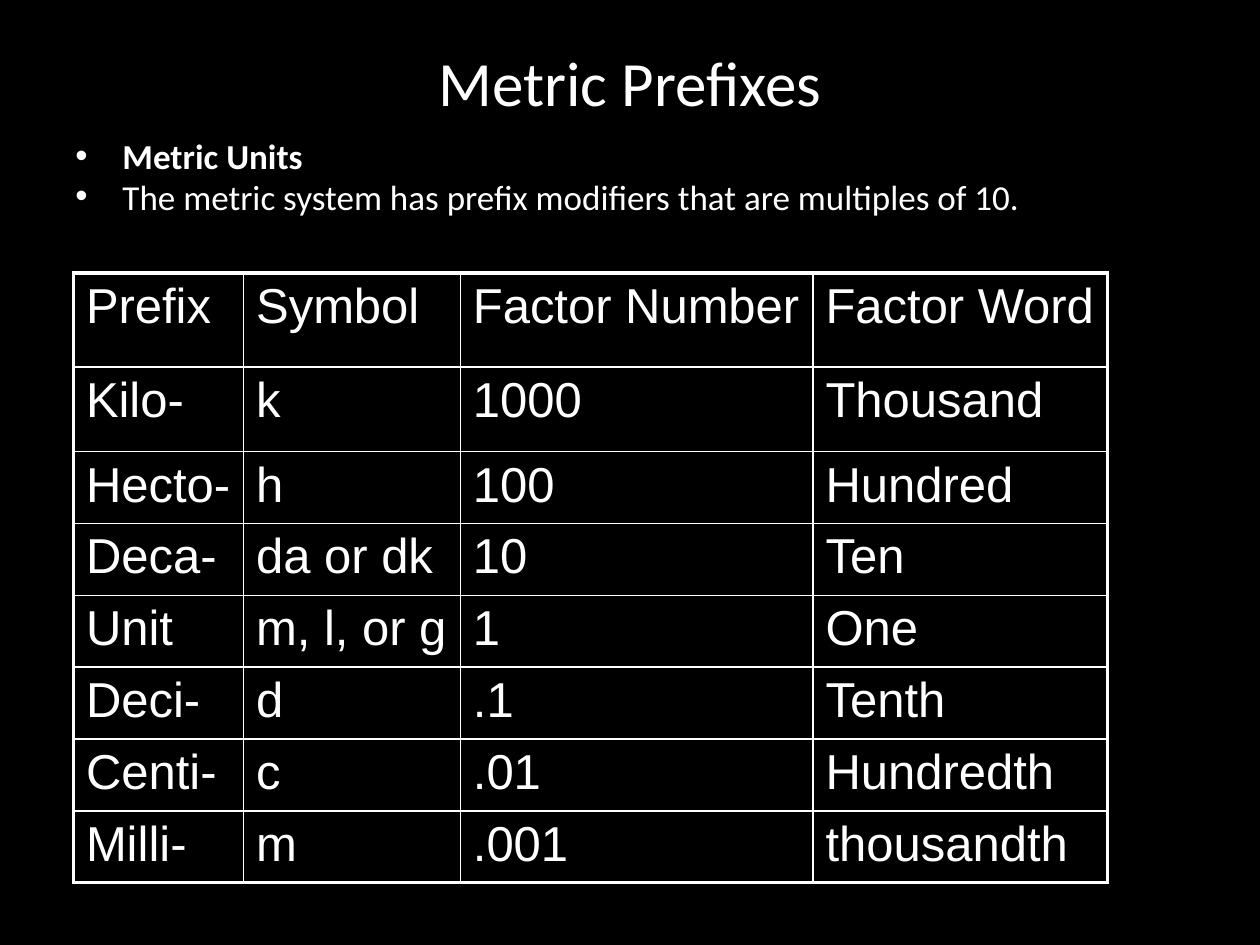
from dataclasses import dataclass

from lxml.etree import SubElement
from pptx import Presentation
from pptx.dml.color import RGBColor
from pptx.enum.text import PP_ALIGN
from pptx.oxml.ns import qn
from pptx.util import Cm, Pt


@dataclass(frozen=True)
class Theme:
    background: str = "000000"
    ink: str = "FFFFFF"
    text_font: str = "Calibri"
    table_font: str = "Arial"
    title_size: int = 36
    body_size: int = 20
    table_size: int = 28
    outer_line: float = 2.25
    inner_line: float = 1


BULLETS = [
    ("Metric Units", True),
    ("The metric system has prefix modifiers that are multiples of 10.", False),
]
PREFIXES = [
    ("Prefix", "Symbol", "Factor Number", "Factor Word"),
    ("Kilo-", "k", "1000", "Thousand"),
    ("Hecto-", "h", "100", "Hundred"),
    ("Deca-", "da or dk", "10", "Ten"),
    ("Unit", "m, l, or g", "1", "One"),
    ("Deci-", "d", ".1", "Tenth"),
    ("Centi-", "c", ".01", "Hundredth"),
    ("Milli-", "m", ".001", "thousandth"),
]
COLUMN_WIDTHS = [3.43, 4.37, 7.11, 5.94]
ROW_HEIGHTS = [1.9, 1.7] + [1.45] * 5 + [1.4]


class SlideBuilder:
    def __init__(self, page, theme):
        self.page = page
        self.theme = theme
        fill = page.background.fill
        fill.solid()
        fill.fore_color.rgb = RGBColor.from_string(theme.background)

    def style(self, paragraph, font_name, size, bold=False):
        font = paragraph.font
        font.name = font_name
        font.size = Pt(size)
        font.bold = bold
        font.color.rgb = RGBColor.from_string(self.theme.ink)

    def text_frame(self, left, top, width, height):
        box = self.page.shapes.add_textbox(Cm(left), Cm(top), Cm(width), Cm(height))
        box.text_frame.word_wrap = True
        return box.text_frame

    def title(self, text, *bounds):
        paragraph = self.text_frame(*bounds).paragraphs[0]
        paragraph.text = text
        paragraph.alignment = PP_ALIGN.CENTER
        self.style(paragraph, self.theme.text_font, self.theme.title_size)

    def bullets(self, items, *bounds):
        frame = self.text_frame(*bounds)
        for index, (text, bold) in enumerate(items):
            paragraph = frame.add_paragraph() if index else frame.paragraphs[0]
            paragraph.text = text
            paragraph.line_spacing = 0.8
            paragraph.space_after = Pt(0.2 * self.theme.body_size)
            self.style(paragraph, self.theme.text_font, self.theme.body_size, bold)
            self.add_bullet(paragraph, Cm(0.95))

    def add_bullet(self, paragraph, indent):
        properties = paragraph._p.get_or_add_pPr()
        properties.set("marL", str(indent))
        properties.set("indent", str(-indent))
        font = properties.makeelement(qn("a:buFont"), {"typeface": "Arial"})
        mark = properties.makeelement(qn("a:buChar"), {"char": "•"})
        defaults = properties.find(qn("a:defRPr"))
        defaults.addprevious(font)
        defaults.addprevious(mark)

    def table(self, rows, widths, heights, left, top):
        table = self.page.shapes.add_table(
            len(rows), len(widths), Cm(left), Cm(top), Cm(sum(widths)), Cm(sum(heights))
        ).table
        table.first_row = table.horz_banding = False
        for column, width in zip(table.columns, widths):
            column.width = Cm(width)
        last_row, last_column = len(rows) - 1, len(widths) - 1
        for r, (row, height) in enumerate(zip(rows, heights)):
            table.rows[r].height = Cm(height)
            for c, text in enumerate(row):
                cell = table.cell(r, c)
                cell.text = text
                paragraph = cell.text_frame.paragraphs[0]
                self.style(paragraph, self.theme.table_font, self.theme.table_size)
                outer_sides = {
                    "L": c == 0, "R": c == last_column, "T": r == 0, "B": r == last_row,
                }
                self.add_borders(cell, outer_sides)
                cell.fill.background()

    def add_borders(self, cell, outer_sides):
        properties = cell._tc.get_or_add_tcPr()
        for side, is_outer in outer_sides.items():
            width = self.theme.outer_line if is_outer else self.theme.inner_line
            line = SubElement(properties, qn(f"a:ln{side}"), w=str(Pt(width)))
            fill = SubElement(line, qn("a:solidFill"))
            SubElement(fill, qn("a:srgbClr"), val=self.theme.ink)


def main():
    deck = Presentation()
    deck.slide_width, deck.slide_height = Cm(25.4), Cm(19.05)
    page = deck.slides.add_slide(deck.slide_layouts[6])
    builder = SlideBuilder(page, Theme())
    builder.title("Metric Prefixes", 1.27, 0.76, 22.86, 3.18)
    builder.bullets(BULLETS, 1.27, 2.75, 20.52, 5.28)
    builder.table(PREFIXES, COLUMN_WIDTHS, ROW_HEIGHTS, 1.48, 5.5)
    deck.save("out.pptx")


if __name__ == "__main__":
    main()
